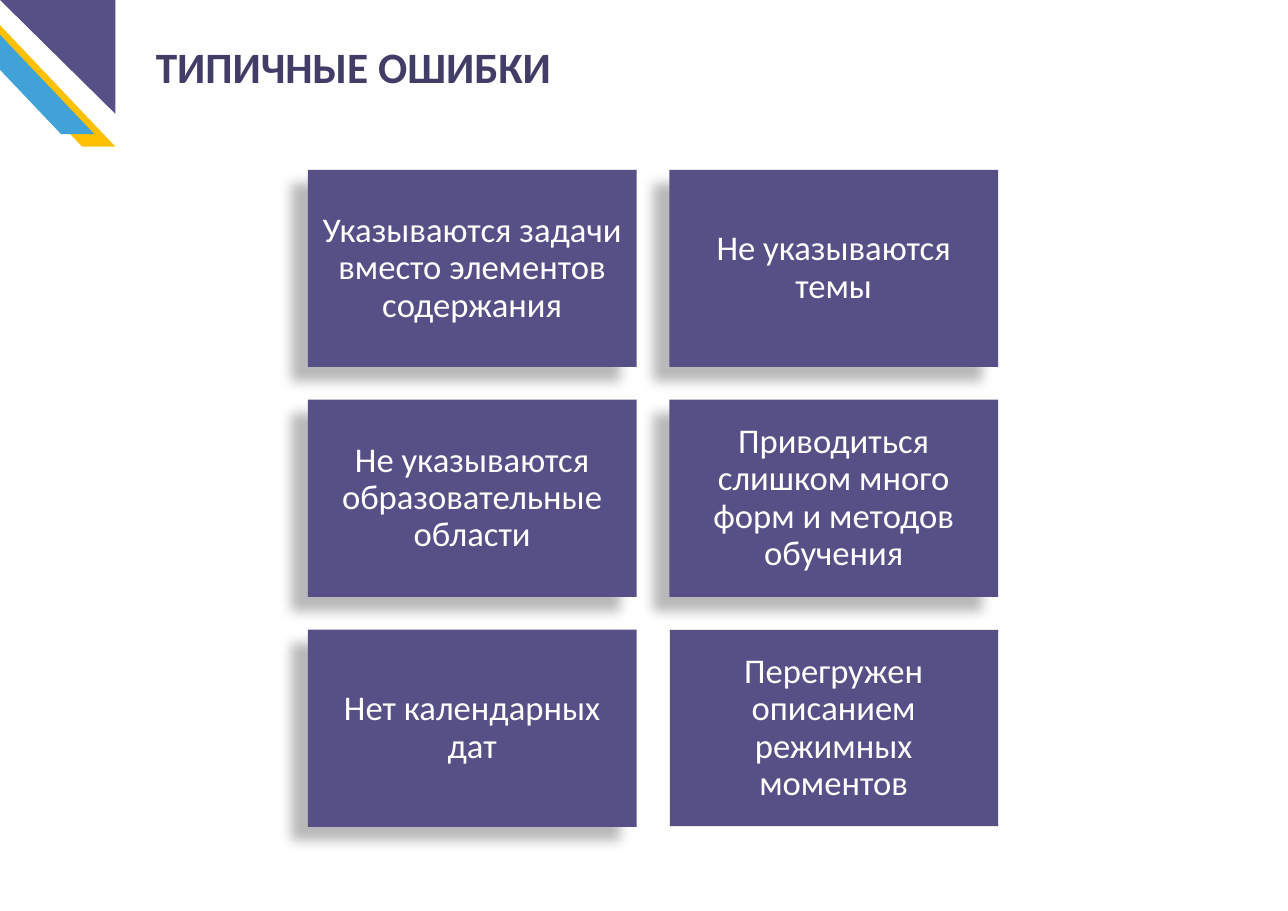
from lxml import etree
from pptx import Presentation
from pptx import util as u
from pptx.dml.color import RGBColor
from pptx.enum import shapes, text
from pptx.oxml.ns import qn

KIND = shapes.MSO_SHAPE
ALIGN = text.PP_ALIGN


def paint(fmt, color):
    fmt.solid()
    fmt.fore_color.rgb = RGBColor.from_string(color)


def write(frame, words, size=32, color="FFFFFF", bold=False,
          align=ALIGN.CENTER, anchor=text.MSO_ANCHOR.MIDDLE,
          inset=(0.13, 0.13), spacing=0.9):
    frame.word_wrap = True
    frame.auto_size = text.MSO_AUTO_SIZE.NONE
    frame.vertical_anchor = anchor
    frame.margin_left = frame.margin_right = u.Inches(inset[0])
    frame.margin_top = frame.margin_bottom = u.Inches(inset[1])
    para = frame.paragraphs[0]
    para.alignment = align
    para.line_spacing = spacing
    para.space_before = u.Pt(0)
    run = para.add_run()
    run.text = words
    run.font.name = "Calibri"
    run.font.size = u.Pt(size)
    run.font.bold = bold
    paint(run.font.fill, color)


class Deck:
    purple = "565087"
    card_fill = "575086"
    gold = "FFC000"
    blue = "41A2D8"
    title_ink = "423D67"
    edge = "E7E6E6"

    def __init__(self, width, height):
        self.file = Presentation()
        self.file.slide_width = u.Inches(width)
        self.file.slide_height = u.Inches(height)
        self.slide = self.file.slides.add_slide(self.file.slide_layouts[5])

    def title(self, words, box):
        head = self.slide.shapes.title
        head.left, head.top, head.width, head.height = map(u.Inches, box)
        write(head.text_frame, words, size=40, color=self.title_ink, bold=True,
              align=ALIGN.LEFT, inset=(0.1, 0.05), spacing=1.0)

    def shape(self, kind, box, fill, flips=(), adjust=None):
        item = self.slide.shapes.add_shape(kind, *map(u.Inches, box))
        item.shadow.inherit = False
        paint(item.fill, fill)
        item.line.fill.background()
        for flip in flips:
            item._element.spPr.find(qn("a:xfrm")).set(flip, "1")
        if adjust is not None:
            item.adjustments[0] = adjust
        return item

    def shade(self, item):
        effects = item._element.spPr.find(qn("a:effectLst"))
        shadow = etree.SubElement(
            effects, qn("a:outerShdw"), blurRad=str(u.Pt(11.8)),
            dist=str(u.Pt(19.7)), dir=str(141 * 60000),
            algn="tr", rotWithShape="0")
        color = etree.SubElement(shadow, qn("a:srgbClr"), val="000000")
        etree.SubElement(color, qn("a:alpha"), val="28000")

    def card(self, words, box, shaded=True):
        item = self.shape(KIND.RECTANGLE, box, self.card_fill)
        if shaded:
            self.shade(item)
        else:
            paint(item.line.fill, self.edge)
            item.line.width = u.Pt(1)
        write(item.text_frame, words)


def main():
    deck = Deck(16.53, 11.69)
    for left, top, fill in ((-0.79, -0.06, deck.gold),
                            (-1.06, -0.22, deck.blue)):
        deck.shape(KIND.PARALLELOGRAM, (left, top, 2.27, 1.94), fill,
                   flips=["flipH"], adjust=0.95)
    deck.shape(KIND.RIGHT_TRIANGLE, (0, 0, 1.48, 1.46), deck.purple,
               flips=["flipH", "flipV"])
    deck.title("ТИПИЧНЫЕ ОШИБКИ", (1.9, 0.47, 12.56, 0.77))

    errors = [
        "Указываются задачи вместо элементов содержания",
        "Не указываются темы",
        "Не указываются образовательные области",
        "Приводиться слишком много форм и методов обучения",
        "Нет календарных дат",
        "Перегружен описанием режимных моментов",
    ]
    width, height, gap = 4.22, 2.53, 0.42
    for i, words in enumerate(errors):
        row, col = divmod(i, 2)
        box = (3.95 + col * (width + gap), 2.18 + row * (height + gap),
               width, height)
        deck.card(words, box, shaded=i < len(errors) - 1)
    deck.file.save("out.pptx")


if __name__ == "__main__":
    main()
